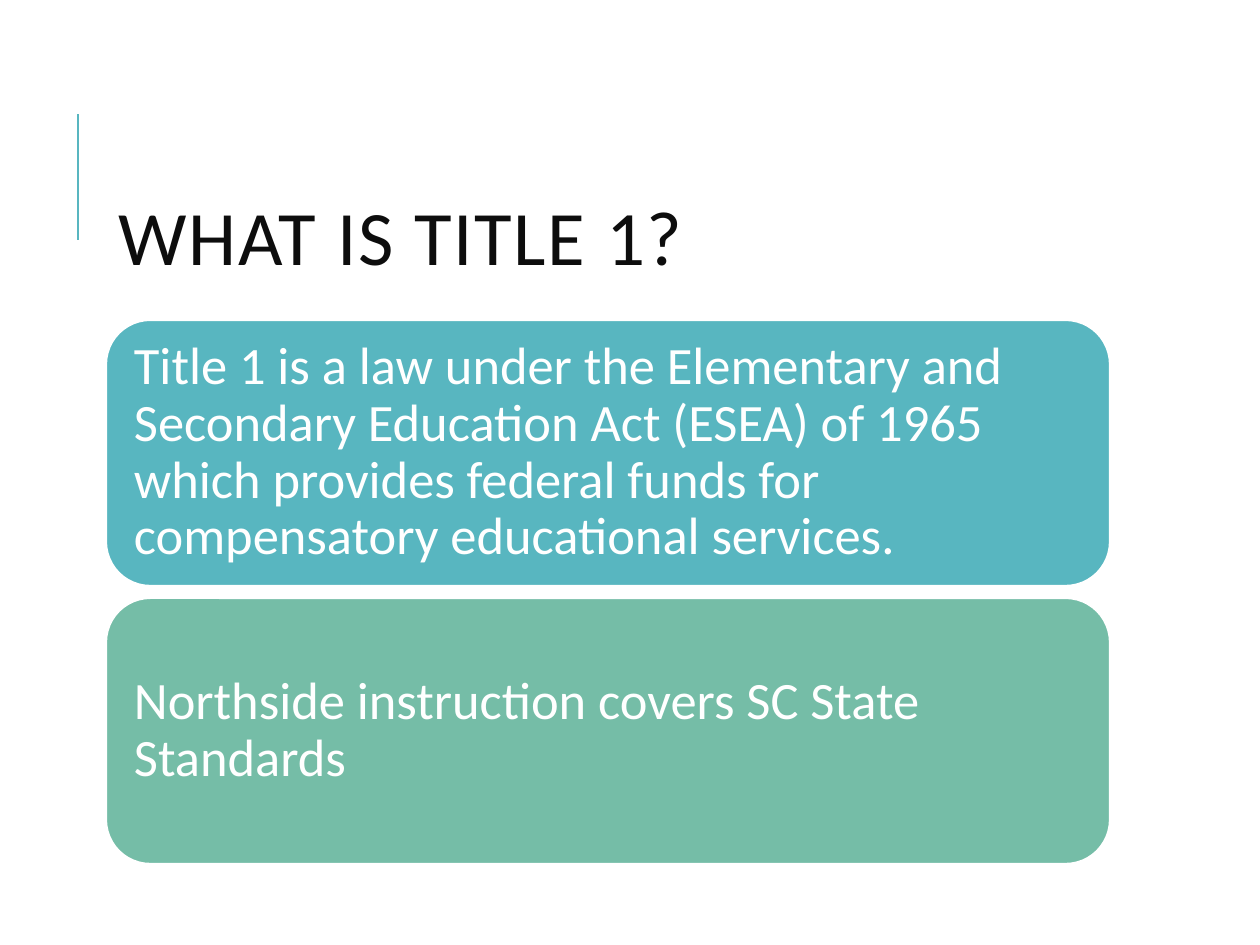
from pptx import Presentation
from pptx.dml.color import RGBColor
from pptx.enum.shapes import MSO_CONNECTOR, MSO_SHAPE
from pptx.enum.text import MSO_ANCHOR, MSO_AUTO_SIZE, PP_ALIGN
from pptx.util import Pt
from lxml import etree

LINE = MSO_CONNECTOR.STRAIGHT
ROUND = MSO_SHAPE.ROUNDED_RECTANGLE
LEFT = PP_ALIGN.LEFT
MIDDLE, BOTTOM = MSO_ANCHOR.MIDDLE, MSO_ANCHOR.BOTTOM
FIXED = MSO_AUTO_SIZE.NONE

TEAL = RGBColor(0x58, 0xB6, 0xC0)
GREEN = RGBColor(0x75, 0xBD, 0xA7)
WHITE = RGBColor(0xFF, 0xFF, 0xFF)
INK = RGBColor(0x0D, 0x0D, 0x0D)

TITLE = "WHAT IS TITLE 1?"
CARDS = [
    ("Title 1 is a law under the Elementary and Secondary Education Act (ESEA) "
     "of 1965 which provides federal funds for compensatory educational services.", TEAL),
    ("Northside instruction covers SC State Standards", GREEN),
]

X, WIDTH = 106, 1004
TOP, HEIGHT, GAP = 320, 266, 12
PAD = 15


def px(n):
    return n * 914400 // 126


def write(shape, text, size, color, anchor, space, pad=None, track=0):
    frame = shape.text_frame
    frame.word_wrap = True
    frame.auto_size = FIXED
    frame.vertical_anchor = anchor
    if pad is not None:
        frame.margin_left = frame.margin_right = px(pad)
        frame.margin_top = frame.margin_bottom = px(pad)
    para = frame.paragraphs[0]
    para.alignment = LEFT
    para.line_spacing = space
    run = para.add_run()
    run.text = text
    font = run.font
    font.name = "Calibri"
    font.size = Pt(size)
    font.color.rgb = color
    if track:
        font._element.set("spc", str(track * 100))


def place(shape, x, y, w, h):
    shape.left, shape.top, shape.width, shape.height = map(px, (x, y, w, h))


deck = Presentation()
deck.slide_width, deck.slide_height = px(1260), px(945)
slide = deck.slides.add_slide(deck.slide_layouts[5])
shapes = slide.shapes

rule = shapes.add_connector(LINE, px(78), px(240), px(78), px(114))
rule.line.color.rgb = TEAL
rule.line.width = Pt(1.5)
etree.SubElement(
    rule._element.spPr,
    "{http://schemas.openxmlformats.org/drawingml/2006/main}effectLst")

title = shapes.title
place(title, X, 81, WIDTH, 206)
write(title, TITLE, 44, INK, BOTTOM, 0.8, track=1)

for i, (text, color) in enumerate(CARDS):
    y = TOP + i * (HEIGHT + GAP)
    card = shapes.add_shape(ROUND, px(X), px(y), px(WIDTH), px(HEIGHT))
    card.shadow.inherit = False
    card.fill.solid()
    card.fill.fore_color.rgb = color
    card.line.color.rgb = WHITE
    card.line.width = Pt(1.25)
    write(card, text, 30, WHITE, MIDDLE, 0.9, pad=PAD)

deck.save("out.pptx")
